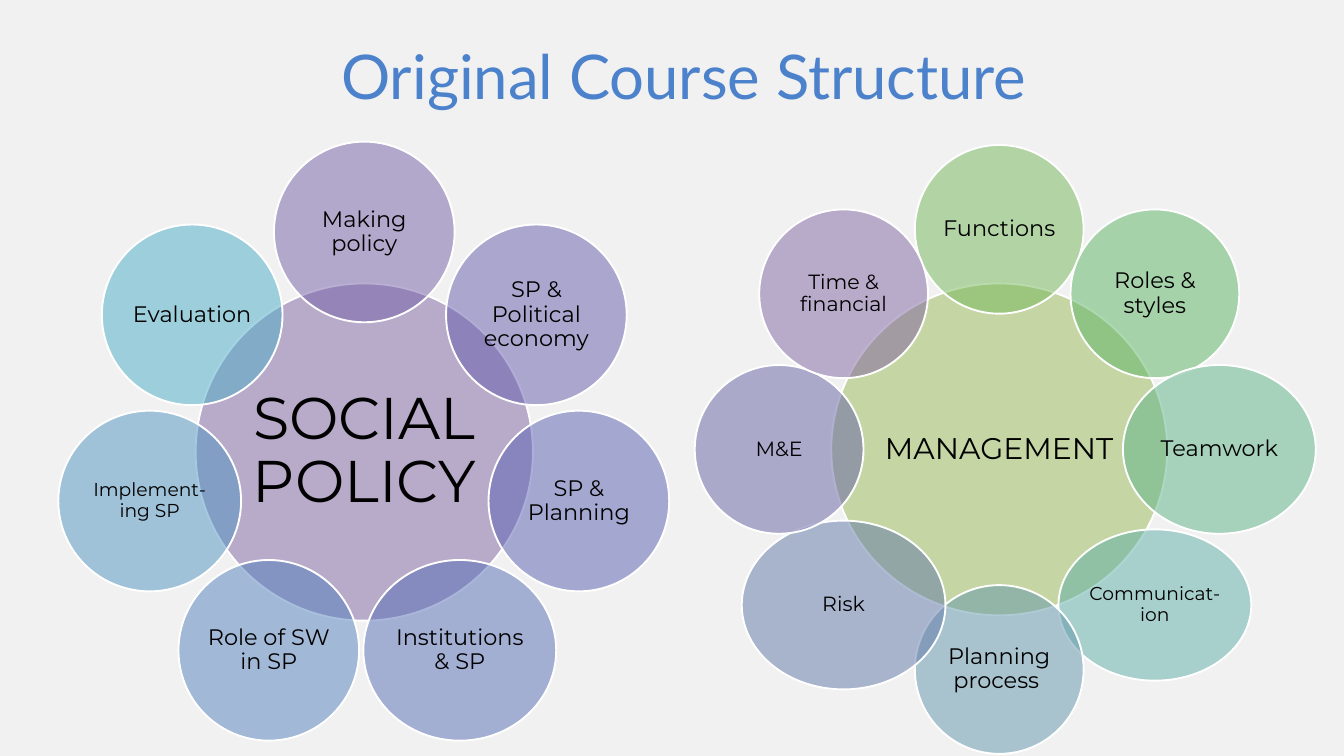
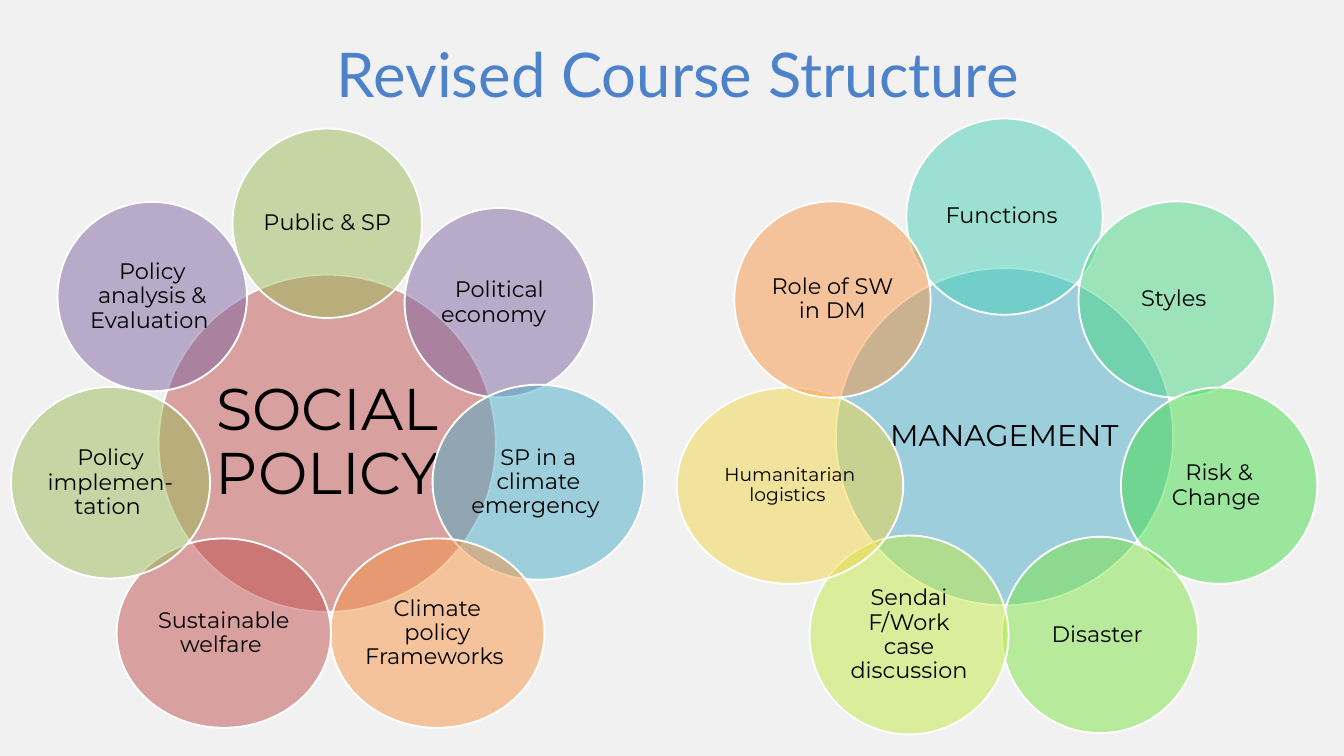
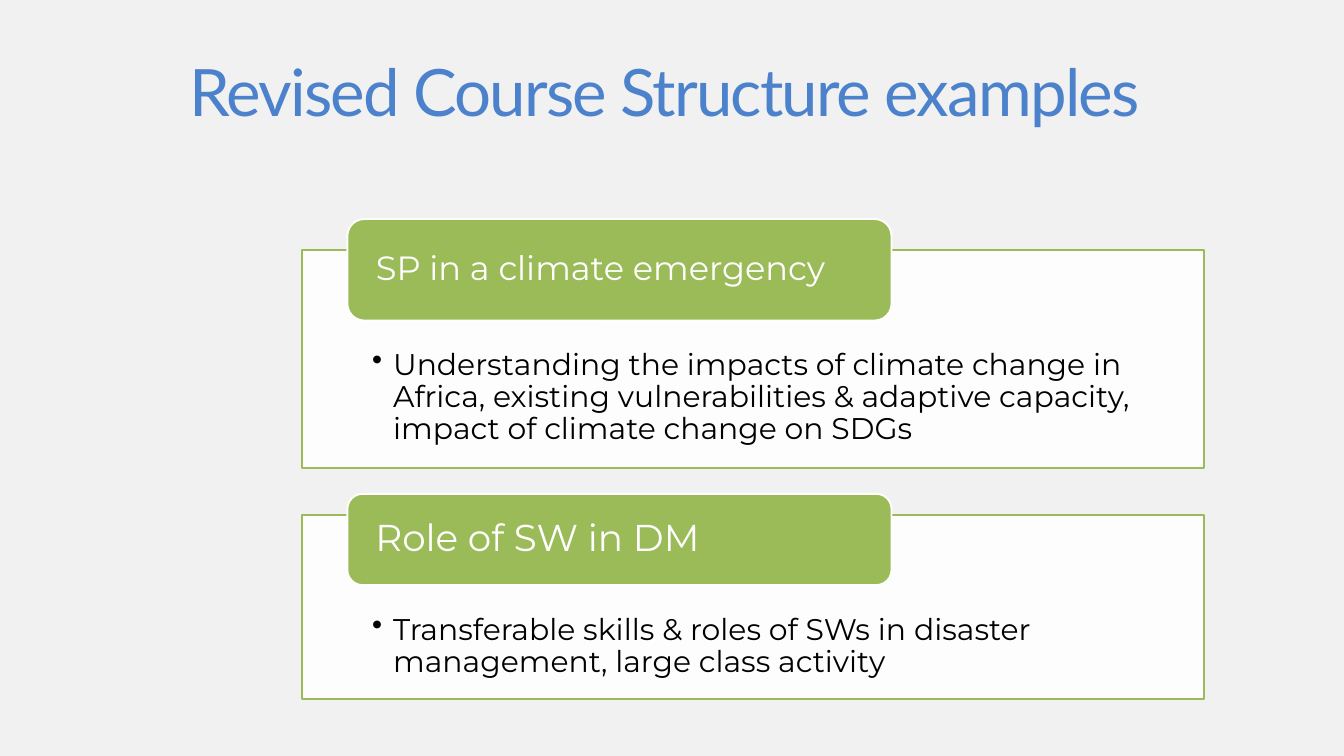
from dataclasses import dataclass
from math import cos, pi, sin

from lxml.etree import SubElement
from pptx import Presentation
from pptx.dml.color import RGBColor
from pptx.enum.shapes import MSO_SHAPE as Shape
from pptx.enum.text import MSO_ANCHOR as Anchor, MSO_AUTO_SIZE as AutoSize, PP_ALIGN as Align
from pptx.oxml.ns import qn
from pptx.util import Cm, Pt

BACKGROUND, BLUE, GREEN, WHITE, BLACK = "F1F1F1", "4C81CB", "9BBB59", "FFFFFF", "000000"
TITLE_FONT, BODY_FONT = "Lato", "Montserrat"
ORBIT = 8.32  # cm from the middle of a hub to the middle of each petal


@dataclass
class Petal:
    """A circle on the orbit; a zero size means the wheel's usual size."""
    text: str
    color: str
    pt: int = 24
    w: float = 0
    h: float = 0
    dx: float = 0
    dy: float = 0


@dataclass
class Wheel:
    text: str
    color: str
    pt: int
    inset: float
    center: tuple
    hub: tuple
    petal: float
    petals: list


WHEEL_SLIDES = [
    (("Original Course Structure ", 8.05, 2.21), [
        Wheel("SOCIAL POLICY ", "8064A2", 63, 0.23, (13.77, 17.09), (12.75, 12.75), 6.83, [
            Petal("Making policy", "7460A7"),
            Petal("SP & Political economy", "645DAD"),
            Petal("SP & Planning", "5960B2"),
            Petal("Institutions & SP", "556EB7", w=7.29),
            Petal("Role of SW in SP", "5280BC"),
            Petal("Implement-ing SP", "4E94C1", 20, w=6.91),
            Petal("Evaluation ", "4BACC6"),
        ]),
        Wheel("MANAGEMENT", "9BBB59", 32, 0.1, (37.77, 16.99), (12.7, 12.55), 6.38, [
            Petal("Functions", "75B85A"),
            Petal("Roles & styles", "5CB565"),
            Petal("Teamwork", "5DB287", w=7.29),
            Petal("Communicat-ion", "5EAFA6", 20, w=7.29, h=5.72),
            Petal("Planning process ", "6096AC"),
            Petal("Risk", "6179A8", 22, w=7.7),
            Petal("M&E", "6762A5", 22),
            Petal("Time & financial", "8064A2", 22),
        ]),
    ]),
    (("Revised Course Structure ", 7.82, 2.13), [
        Wheel("SOCIAL POLICY ", "C0504D", 63, 0.23, (12.37, 16.76), (12.75, 12.75), 7.16, [
            Petal("Public & SP ", "9BBB59"),
            Petal("Political economy  ", "8064A2", dy=-0.13),
            Petal("SP in a climate emergency ", "4BACC6", w=8, h=7.37, dx=-0.13, dy=-0.38),
            Petal("Climate policy Frameworks ", "F79646", w=8.1, dx=0.55, dy=-0.32),
            Petal("Sustainable welfare ", "C0504D", w=8.1, dx=-0.3, dy=-0.32),
            Petal("Policy implemen-tation ", "9BBB59", w=7.52, h=7.24, dx=-0.08, dy=-0.36),
            Petal("Policy analysis & Evaluation ", "8064A2", dx=-0.11, dy=-0.36),
        ]),
        Wheel("MANAGEMENT", "4BACC6", 32, 0.1, (37.97, 16.51), (12.75, 12.75), 7.42, [
            Petal("Functions ", "49CEB6"),
            Petal("Styles ", "48D684"),
            Petal("Risk & Change ", "47DD4B"),
            Petal("Disaster ", "80E446"),
            Petal("Sendai F/Work case discussion", "C3EB46", w=7.52, h=7.52),
            Petal("Humanitarian logistics ", "F1D746", 20, w=8.56),
            Petal("Role of SW in DM", "F79646"),
        ]),
    ]),
]

# heading, size, top and height of its tab; text, top and height of its box
EXAMPLES = [
    ("SP in a climate emergency", 36, 8.28, 3.84,
     "Understanding the impacts of climate change in Africa, existing vulnerabilities"
     " & adaptive capacity, impact of climate change on SDGs", 9.45, 8.26),
    ("Role of SW in DM", 40, 18.67, 3.45,
     "Transferable skills & roles of SWs in disaster management, large class activity",
     19.46, 6.96),
]


def rgb(color):
    return RGBColor.from_string(color)


def add_slide(prs):
    s = prs.slides.add_slide(prs.slide_layouts[6])
    s.background.fill.solid()
    s.background.fill.fore_color.rgb = rgb(BACKGROUND)
    return s


def write(sp, text, pt, color, insets, font=BODY_FONT, align=Align.CENTER,
          anchor=Anchor.MIDDLE, spacing=0.9):
    tf = sp.text_frame
    tf.word_wrap = True
    tf.vertical_anchor = anchor
    tf.margin_left, tf.margin_top, tf.margin_right, tf.margin_bottom = map(Cm, insets)
    p = tf.paragraphs[0]
    p.alignment = align
    p.line_spacing = spacing
    r = p.add_run()
    r.text = text
    r.font.name = font
    r.font.size = Pt(pt)
    r.font.color.rgb = rgb(color)
    return p


def add_title(s, text, x, y, w=36.2, h=2.18, pt=66, leading=57, tracking=0):
    sp = s.shapes.add_textbox(Cm(x), Cm(y), Cm(w), Cm(h))
    p = write(sp, text, pt, BLUE, (0, 0, 0, 0), TITLE_FONT, anchor=Anchor.TOP,
              spacing=Pt(leading))
    sp.text_frame.auto_size = AutoSize.SHAPE_TO_FIT_TEXT
    if tracking:
        p.runs[0].font._element.set("spc", str(round(tracking * 100)))


def add_box(group, kind, x, y, w, h, fill, line=WHITE, opacity=100):
    sp = group.shapes.add_shape(kind, Cm(x), Cm(y), Cm(w), Cm(h))
    sp.shadow.inherit = False
    sp.fill.solid()
    sp.fill.fore_color.rgb = rgb(fill)
    if opacity < 100:
        clr = sp._element.spPr.find(qn("a:solidFill"))[0]
        SubElement(clr, qn("a:alpha")).set("val", str(opacity * 1000))
    sp.line.color.rgb = rgb(line)
    sp.line.width = Pt(2)
    return sp


def add_circle(group, text, pt, color, cx, cy, w, h, inset):
    sp = add_box(group, Shape.OVAL, cx - w / 2, cy - h / 2, w, h, color, opacity=50)
    write(sp, text, pt, BLACK, [inset] * 4)


def add_wheel(s, wheel):
    group = s.shapes.add_group_shape()
    cx, cy = wheel.center
    add_circle(group, wheel.text, wheel.pt, wheel.color, cx, cy, *wheel.hub, wheel.inset)
    for i, petal in enumerate(wheel.petals):
        angle = 2 * pi * i / len(wheel.petals)
        add_circle(group, petal.text, petal.pt, petal.color,
                   cx + ORBIT * sin(angle) + petal.dx, cy - ORBIT * cos(angle) + petal.dy,
                   petal.w or wheel.petal, petal.h or wheel.petal, 0.08)


def add_bullet(p):
    p.level = 1
    pPr = p._p.get_or_add_pPr()
    pPr.set("marL", str(Cm(0.79)))
    pPr.set("indent", str(-Cm(0.79)))
    SubElement(pPr, qn("a:buChar")).set("char", "•")


def add_examples(s):
    group = s.shapes.add_group_shape()
    for heading, pt, tab_y, tab_h, text, box_y, box_h in EXAMPLES:
        box = add_box(group, Shape.RECTANGLE, 11.43, box_y, 34.09, box_h, WHITE, GREEN, 90)
        add_bullet(write(box, text, 32, BLACK, (2.64, 3.76, 2.64, 0.64),
                         align=Align.LEFT, anchor=Anchor.TOP))
        tab = add_box(group, Shape.ROUNDED_RECTANGLE, 13.13, tab_y, 20.57, tab_h, GREEN)
        write(tab, heading, pt, WHITE, (0.89, 0, 0.89, 0), align=Align.LEFT)


def main():
    prs = Presentation()
    prs.slide_width, prs.slide_height = Cm(50.8), Cm(28.58)
    for title, wheels in WHEEL_SLIDES:
        s = add_slide(prs)
        add_title(s, *title)
        for wheel in wheels:
            add_wheel(s, wheel)
    s = add_slide(prs)
    add_title(s, "Revised Course Structure examples ", 1.9, 2.01, 47, 2.92,
              pt=70, leading=81.9, tracking=-1.9)
    add_examples(s)
    prs.save("out.pptx")


if __name__ == "__main__":
    main()
